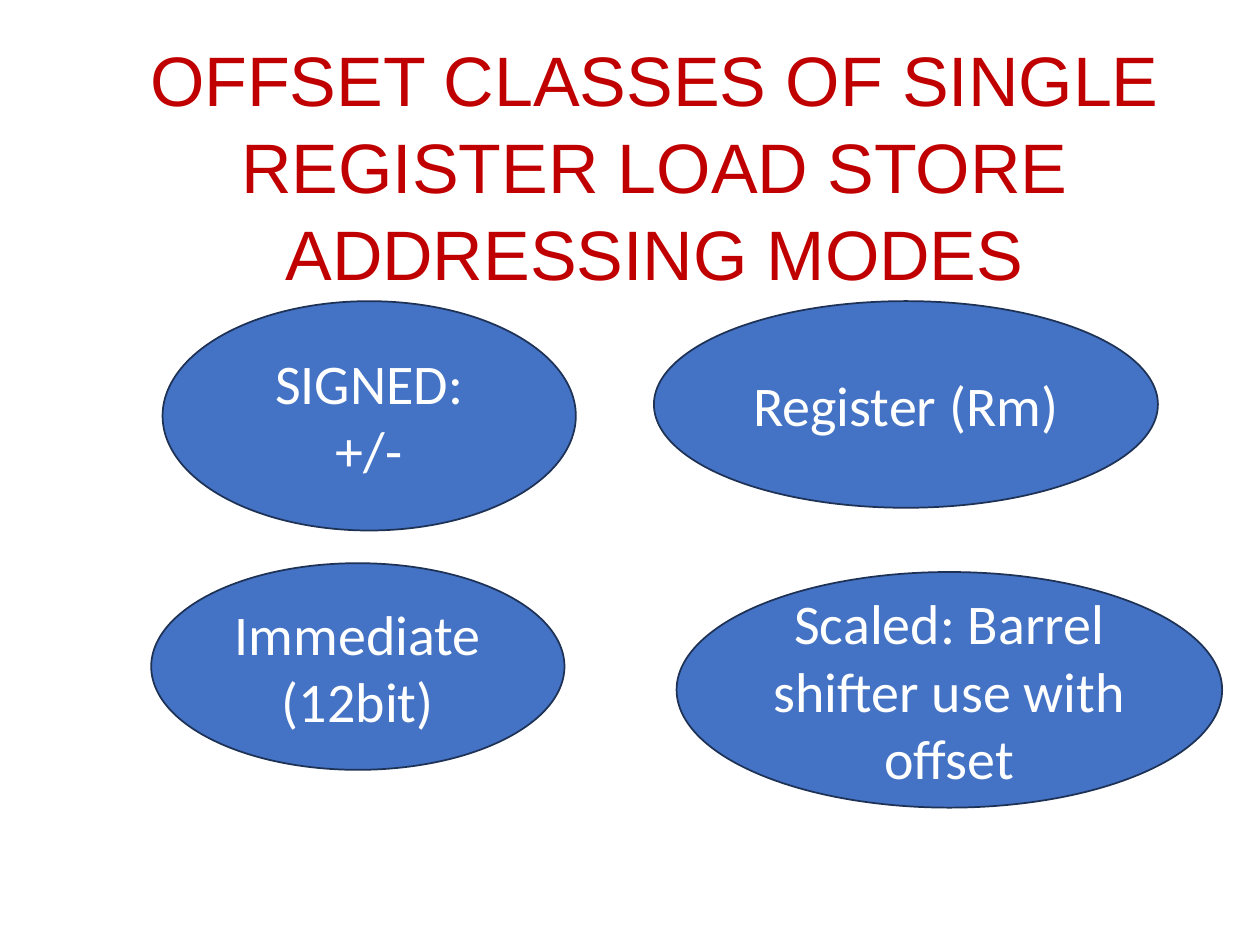
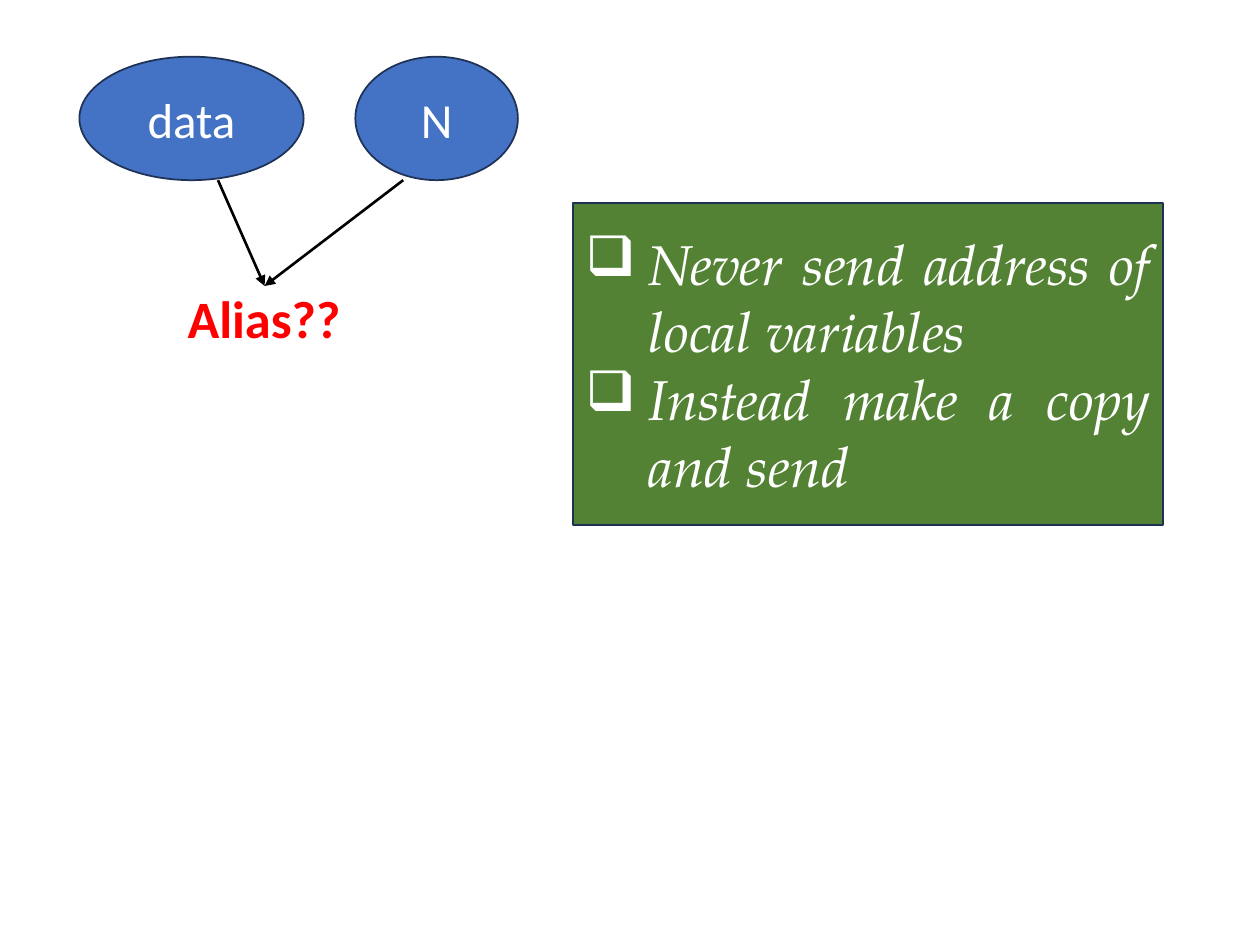
from lxml.etree import SubElement
from pptx import Presentation
from pptx.dml.color import RGBColor
from pptx.enum.shapes import MSO_CONNECTOR, MSO_SHAPE
from pptx.enum.text import MSO_ANCHOR, MSO_AUTO_SIZE, PP_ALIGN
from pptx.oxml.ns import qn
from pptx.util import Inches, Pt

WHITE = RGBColor(0xFF, 0xFF, 0xFF)
BLACK = RGBColor(0x00, 0x00, 0x00)
RED = RGBColor(0xFF, 0x00, 0x00)
DARK_RED = RGBColor(0xC0, 0x00, 0x00)
BLUE = RGBColor(0x44, 0x72, 0xC4)
NAVY = RGBColor(0x1E, 0x32, 0x56)
GREEN = RGBColor(0x54, 0x82, 0x35)

TITLE_FONT, BODY_FONT, NOTE_FONT = "Arial", "Calibri", "TeX Gyre Pagella"
COLUMNS, ROWS = 100, 75


class Deck:
    """Places styled elements on a grid of COLUMNS by ROWS."""

    def __init__(self):
        self.prs = Presentation()
        self.prs.slide_width, self.prs.slide_height = Inches(10), Inches(7.5)
        self.column = self.prs.slide_width / COLUMNS
        self.row = self.prs.slide_height / ROWS
        self.shapes = None

    def new_slide(self):
        self.shapes = self.prs.slides.add_slide(self.prs.slide_layouts[6]).shapes

    def on_grid(self, *cells):
        """Turn alternating columns and rows into lengths."""
        units = (self.column, self.row)
        return [round(cell * units[i % 2]) for i, cell in enumerate(cells)]

    def set_text(self, frame, text, size, color, font=BODY_FONT, align=PP_ALIGN.CENTER,
                 bold=False, italic=False, bullet=None):
        frame.text = text
        for paragraph in frame.paragraphs:
            if bullet:
                self.add_bullet(paragraph, bullet)
            paragraph.alignment = align
            for run in paragraph.runs:
                run.font.name, run.font.size = font, Pt(size)
                run.font.bold, run.font.italic = bold, italic
                run.font.color.rgb = color

    def add_bullet(self, paragraph, bullet):
        properties = paragraph._p.get_or_add_pPr()
        properties.set("marL", str(Inches(0.5)))
        properties.set("indent", str(-Inches(0.5)))
        SubElement(properties, qn("a:buChar")).set("char", bullet)

    def text_box(self, cells, wrap=True):
        frame = self.shapes.add_textbox(*self.on_grid(*cells)).text_frame
        frame.word_wrap = wrap
        frame.auto_size = MSO_AUTO_SIZE.SHAPE_TO_FIT_TEXT
        return frame

    def title(self, text, cells):
        frame = self.text_box(cells)
        frame.margin_top = Inches(0.08)
        self.set_text(frame, text, 40, DARK_RED, TITLE_FONT)
        frame.paragraphs[0].line_spacing = 1.04

    def label(self, text, cells):
        self.set_text(self.text_box(cells, wrap=False), text, 30, RED,
                      align=PP_ALIGN.LEFT, bold=True)

    def panel(self, kind, cells, fill):
        """Draw an outlined shape and return its text frame."""
        shape = self.shapes.add_shape(kind, *self.on_grid(*cells))
        shape.shadow.inherit = False
        shape.fill.solid()
        shape.fill.fore_color.rgb = fill
        shape.line.color.rgb, shape.line.width = NAVY, Pt(1)
        shape.text_frame.word_wrap = True
        shape.text_frame.vertical_anchor = MSO_ANCHOR.MIDDLE
        return shape.text_frame

    def ellipse(self, text, cells, size):
        self.set_text(self.panel(MSO_SHAPE.OVAL, cells, BLUE), text, size, WHITE)

    def note(self, points, cells):
        self.set_text(self.panel(MSO_SHAPE.RECTANGLE, cells, GREEN), "\n".join(points),
                      32, WHITE, NOTE_FONT, PP_ALIGN.JUSTIFY, italic=True, bullet="❑")

    def arrow(self, start, end):
        arrow = self.shapes.add_connector(MSO_CONNECTOR.STRAIGHT,
                                          *self.on_grid(*start, *end))
        arrow.line.color.rgb, arrow.line.width = BLACK, Pt(1.5)
        SubElement(arrow.line._get_or_add_ln(), qn("a:tailEnd")).set("type", "triangle")
        SubElement(arrow._element.spPr, qn("a:effectLst"))


def offset_classes(deck):
    deck.new_slide()
    deck.title("OFFSET CLASSES OF SINGLE REGISTER LOAD STORE ADDRESSING MODES",
               (5.8, 1.8, 92.3, 21.2))
    classes = {
        "SIGNED:\n+/-": (12.9, 23.9, 32.8, 18.2),
        "Scaled: Barrel shifter use with offset": (53.7, 45.4, 43.3, 18.7),
        "Register (Rm)": (51.9, 23.9, 40, 16.4),
        "Immediate (12bit)": (12, 44.7, 32.8, 16.4),
    }
    for offset_class, cells in classes.items():
        deck.ellipse(offset_class, cells, 32)


def aliasing(deck):
    deck.new_slide()
    variable_top, variable_height = 4.5, 9.8
    for variable, left, width in (("data", 6.3, 17.8), ("N", 28.2, 12.9)):
        deck.ellipse(variable, (left, variable_top, width, variable_height), 28)
    alias_point = (21, 22.7)
    for arrow_start in (17.3, 32):
        deck.arrow((arrow_start, variable_top + variable_height), alias_point)
    deck.label("Alias??", (13.9, 22.2, 14.3, 6.1))
    deck.note(["Never send address of local variables", "Instead make a copy and send"],
              (45.5, 16.1, 46.8, 25.6))


def main():
    deck = Deck()
    offset_classes(deck)
    aliasing(deck)
    deck.prs.save("out.pptx")


if __name__ == "__main__":
    main()
